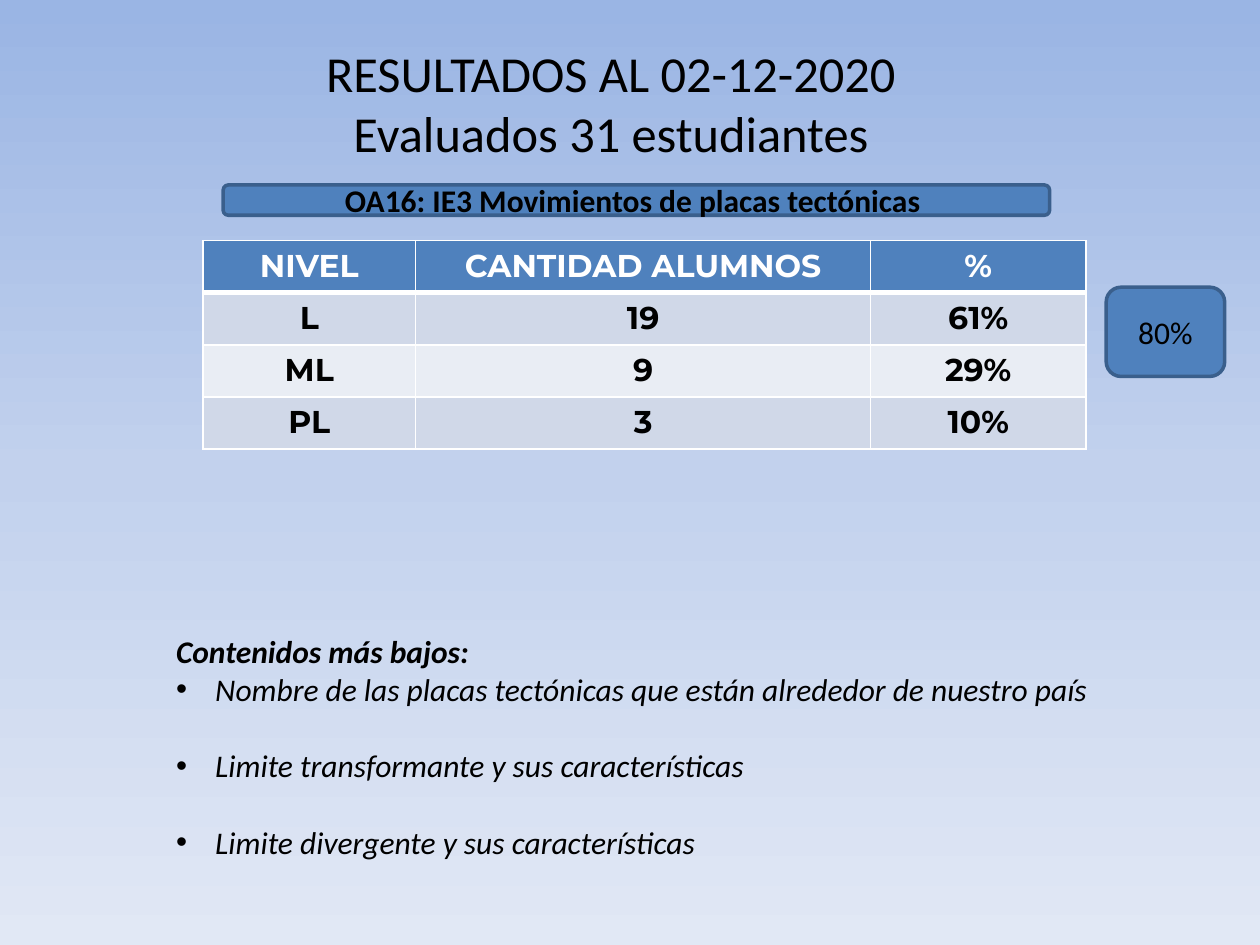
from copy import deepcopy
from typing import NamedTuple

from lxml import etree
from pptx import Presentation
from pptx import util as u
from pptx.dml.color import RGBColor
from pptx.enum import shapes, text
from pptx.oxml.ns import qn

COLORS = {
    "sky_top": "9AB5E4", "sky_middle": "C2D1ED", "sky_bottom": "E1E8F5",
    "accent": "4F81BD", "accent_edge": "3A5F8C",
    "band_dark": "D0D8E8", "band_light": "E9EDF4",
    "black": "000000", "white": "FFFFFF",
}


class Box(NamedTuple):
    """Left, top, width and height in centimetres."""
    left: float
    top: float
    width: float
    height: float

    def lengths(self) -> list[u.Cm]:
        return [u.Cm(value) for value in self]


class Label(NamedTuple):
    wording: str
    box: Box
    bold: bool


LABELS = [
    Label("OA16: IE3 Movimientos de placas tectónicas ", Box(4.5, 3.73, 16.66, 0.61), True),
    Label("80%", Box(22.3, 5.79, 2.39, 1.8), False),
]
RESULTS = [
    ("NIVEL", "CANTIDAD ALUMNOS", "%"),
    ("L", "19", "61%"),
    ("ML", "9", "29%"),
    ("PL", "3", "10%"),
]
RESULTS_BOX = Box(4.09, 4.85, 17.8, 4.2)
RESULTS_WIDTHS = (4.29, 9.17, 4.34)
LOWEST_CONTENTS = [
    "Nombre de las placas tectónicas que están alrededor de nuestro país",
    "Limite transformante y sus características",
    "Limite divergente y sus características",
]


def rgb(name: str) -> RGBColor:
    return RGBColor.from_string(COLORS[name])


def write(paragraph, wording: str, *, size: float = 18, font: str = "Calibri",
          color: str = "black", bold: bool = False, italic: bool = False,
          align=text.PP_ALIGN.CENTER) -> None:
    """Fill a paragraph; each line of the wording ends in a line break."""
    paragraph.alignment = align
    for number, line in enumerate(wording.splitlines()):
        if number:
            paragraph.add_line_break()
        run = paragraph.add_run()
        run.text = line
        run.font.size = u.Pt(size)
        run.font.name = font
        run.font.bold = bold
        run.font.italic = italic
        run.font.color.rgb = rgb(color)


def add_frame(slide, box: Box, anchor=text.MSO_ANCHOR.TOP):
    frame = slide.shapes.add_textbox(*box.lengths()).text_frame
    frame.word_wrap = True
    frame.vertical_anchor = anchor
    return frame


def paint_background(slide) -> None:
    fill = slide.background.fill
    fill.gradient()
    fill.gradient_angle = 270
    stop_list = slide.element.find(".//" + qn("a:gsLst"))
    stop_list.insert(1, deepcopy(stop_list[0]))
    names = ("sky_top", "sky_middle", "sky_bottom")
    for stop, name, position in zip(fill.gradient_stops, names, (0, 0.5, 1)):
        stop.color.rgb = rgb(name)
        stop.position = position


def add_label(slide, label: Label) -> None:
    panel = slide.shapes.add_shape(shapes.MSO_SHAPE.ROUNDED_RECTANGLE, *label.box.lengths())
    panel.shadow.inherit = False
    panel.fill.solid()
    panel.fill.fore_color.rgb = rgb("accent")
    panel.line.color.rgb = rgb("accent_edge")
    panel.line.width = u.Pt(2)
    panel.text_frame.word_wrap = True
    panel.text_frame.vertical_anchor = text.MSO_ANCHOR.MIDDLE
    write(panel.text_frame.paragraphs[0], label.wording, bold=label.bold)


def set_borders(cell, widths: dict[str, float]) -> None:
    """Borders come before the fill in the cell properties."""
    properties = cell._tc.get_or_add_tcPr()
    for position, (side, width) in enumerate(widths.items()):
        line = etree.Element(qn(f"a:{side}"), w=str(u.Pt(width)))
        solid = etree.SubElement(line, qn("a:solidFill"))
        etree.SubElement(solid, qn("a:srgbClr"), val=COLORS["white"])
        properties.insert(position, line)


def add_results(slide) -> None:
    table = slide.shapes.add_table(
        len(RESULTS), len(RESULTS_WIDTHS), *RESULTS_BOX.lengths()).table
    for column, width in zip(table.columns, RESULTS_WIDTHS):
        column.width = u.Cm(width)
    for row, values in enumerate(RESULTS):
        header = row == 0
        band = "accent" if header else "band_dark" if row % 2 else "band_light"
        for column, value in enumerate(values):
            cell = table.cell(row, column)
            cell.fill.solid()
            cell.fill.fore_color.rgb = rgb(band)
            set_borders(cell, {"lnL": 1, "lnR": 1, "lnT": 3 if row == 1 else 1,
                               "lnB": 3 if header else 1})
            write(cell.text_frame.paragraphs[0], value, font="Montserrat", bold=True,
                  color="white" if header else "black")


def add_bullet(paragraph, indent: u.Cm) -> None:
    properties = paragraph._p.get_or_add_pPr()
    properties.set("marL", str(indent))
    properties.set("indent", str(-indent))
    etree.SubElement(properties, qn("a:buFont"), typeface="Arial")
    etree.SubElement(properties, qn("a:buChar"), char="•")


def add_lowest_contents(slide) -> None:
    frame = add_frame(slide, Box(3.3, 12.62, 19.81, 4.88))
    write(frame.paragraphs[0], "Contenidos más bajos:", bold=True, italic=True,
          align=text.PP_ALIGN.LEFT)
    for content in LOWEST_CONTENTS:
        item = frame.add_paragraph()
        write(item, content, italic=True, align=text.PP_ALIGN.LEFT)
        item.space_after = u.Pt(22)
        add_bullet(item, u.Cm(0.79))


def main() -> None:
    deck = Presentation()
    deck.slide_width, deck.slide_height = u.Cm(25.4), u.Cm(19.05)
    slide = deck.slides.add_slide(deck.slide_layouts[6])
    paint_background(slide)

    # Heading
    heading = add_frame(slide, Box(0.89, 0.81, 22.86, 2.51), text.MSO_ANCHOR.MIDDLE)
    write(heading.paragraphs[0], "RESULTADOS AL 02-12-2020\nEvaluados 31 estudiantes", size=28.8)

    # Results, weakest topics, then the labels on top
    add_results(slide)
    add_lowest_contents(slide)
    for label in LABELS:
        add_label(slide, label)

    deck.save("out.pptx")


if __name__ == "__main__":
    main()
